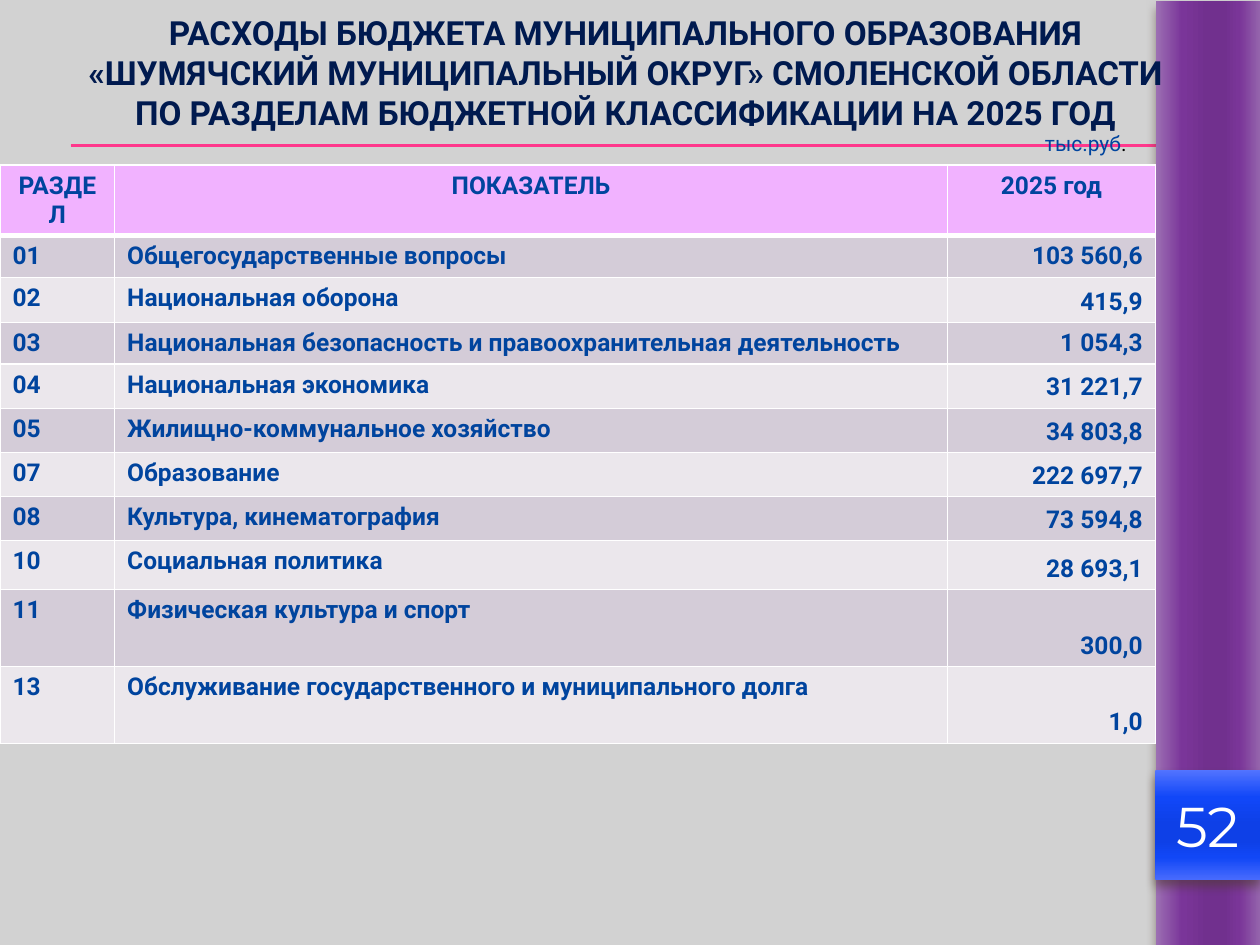
import pptx
import pptx.dml.color
import pptx.enum.dml
import pptx.enum.shapes
import pptx.enum.text
import pptx.oxml
import pptx.oxml.ns
import pptx.util

Pt = pptx.util.Pt
Align = pptx.enum.text.PP_ALIGN
Anchor = pptx.enum.text.MSO_ANCHOR
NS = pptx.oxml.ns.nsdecls("a")

PURPLE = [(0, "9C6FB3"), (25, "7A3599"), (50, "71308E"),
          (65, "71308E"), (80, "7A3598"), (100, "9566AD")]
BLUE = [(0, "5374FF"), (25, "1147F8"), (50, "0E40E7"),
        (65, "0E40E7"), (80, "1147F6"), (100, "476AFD")]

HEAD = ("РАЗДЕЛ", "ПОКАЗАТЕЛЬ", "2025 год")
ROWS = [
    ("01", "Общегосударственные вопросы", "103 560,6"),
    ("02", "Национальная оборона", "415,9"),
    ("03", "Национальная безопасность и правоохранительная деятельность", "1 054,3"),
    ("04", "Национальная экономика", "31 221,7"),
    ("05", "Жилищно-коммунальное хозяйство", "34 803,8"),
    ("07", "Образование", "222 697,7"),
    ("08", "Культура, кинематография", "73 594,8"),
    ("10", "Социальная политика", "28 693,1"),
    ("11", "Физическая культура и спорт", "300,0"),
    ("13", "Обслуживание государственного и муниципального долга", "1,0"),
]
WIDTHS = (9.1, 66.1, 16.5)
HEIGHTS = (3.4, 3, 3.6, 2.6, 3.5, 3.5, 3.5, 3.5, 3.9, 6.1, 6.1)


def rgb(code):
    return pptx.dml.color.RGBColor.from_string(code)


def xml(text):
    """Element from text whose first tag has no attributes closed by '/>'."""
    return pptx.oxml.parse_xml(text.replace(">", f" {NS}>", 1))


def stroke(tag, width, color):
    """Outline element for a cell edge or for letters."""
    return xml(f'<a:{tag} w="{Pt(width)}"><a:solidFill><a:srgbClr val="{color}"/>'
               f'</a:solidFill></a:{tag}>')


class Sheet:
    """Draws on one slide; lengths are in cells of a 100 by 75 grid."""
    font = "Roboto"
    ink = "00449E"

    def __init__(self, deck, paper):
        self.unit = deck.slide_width / 100
        self.slide = deck.slides.add_slide(deck.slide_layouts[5])
        fill = self.slide.background.fill
        fill.solid()
        fill.fore_color.rgb = rgb(paper)
        self.shapes = self.slide.shapes

    def span(self, *cells):
        return [round(c * self.unit) for c in cells]

    def words(self, para, text, size, color=None, bold=False, font=None, align=None):
        para.alignment = align
        run = para.add_run()
        run.text = text
        run.font.size = Pt(size)
        run.font.bold = bold
        run.font.name = font or self.font
        run.font.color.rgb = rgb(color or self.ink)
        return run

    def rule(self, left, right, top, color):
        ends = self.span(left, top, right, top)
        line = self.shapes.add_connector(pptx.enum.shapes.MSO_CONNECTOR.STRAIGHT, *ends)
        line.line.color.rgb = rgb(color)
        line.line.width = Pt(0.75)
        line._element.spPr.append(xml("<a:effectLst></a:effectLst>"))

    def panel(self, box, stops, turn=0):
        """Rectangle with a top-to-bottom gradient and a soft shadow."""
        shape = self.shapes.add_shape(
            pptx.enum.shapes.MSO_SHAPE.RECTANGLE, *self.span(*box))
        shape.rotation = turn
        marks = "".join(f'<a:gs pos="{p * 1000}"><a:srgbClr val="{c}"/></a:gs>'
                        for p, c in stops)
        props = shape._element.spPr
        props.insert(2, xml(f'<a:gradFill rotWithShape="1"><a:gsLst>{marks}</a:gsLst>'
                            '<a:lin ang="5400000" scaled="0"/></a:gradFill>'))
        shape.line.fill.background()
        props.append(xml(
            '<a:effectLst>'
            f'<a:outerShdw blurRad="{Pt(6)}" dist="{Pt(4)}" dir="5400000" '
            'rotWithShape="0"><a:srgbClr val="4E3B30"><a:alpha val="60000"/>'
            '</a:srgbClr></a:outerShdw></a:effectLst>'))
        return shape

    def title(self, box, text):
        shape = self.shapes.title
        shape.left, shape.top, shape.width, shape.height = self.span(*box)
        frame = shape.text_frame
        frame.auto_size = pptx.enum.text.MSO_AUTO_SIZE.NONE
        frame.word_wrap = True
        frame.vertical_anchor = Anchor.MIDDLE
        frame.margin_left, frame.margin_right = self.span(2, 2)
        run = self.words(frame.paragraphs[0], text, 19, "001A4F", True,
                         align=Align.CENTER)
        run.font._element.insert(0, stroke("ln", 0.71, "4E005F"))
        # Bring the heading in front of the rules and the side bar
        self.shapes._spTree.append(shape._element)

    def cell(self, cell, text, fill, align, anchor, base):
        cell.fill.solid()
        cell.fill.fore_color.rgb = rgb(fill)
        cell.vertical_anchor = anchor
        self.words(cell.text_frame.paragraphs[0], text, 14, bold=True, align=align)
        props = cell._tc.get_or_add_tcPr()
        edges = {"lnL": 1, "lnR": 1, "lnT": 1, "lnB": base}
        for at, (tag, width) in enumerate(edges.items()):
            props.insert(at, stroke(tag, width, "FFFFFF"))

    def table(self, left, top):
        size = self.span(left, top, sum(WIDTHS), sum(HEIGHTS))
        grid = self.shapes.add_table(len(HEIGHTS), len(WIDTHS), *size).table
        for col, width in zip(grid.columns, self.span(*WIDTHS)):
            col.width = width
        for row, height in zip(grid.rows, self.span(*HEIGHTS)):
            row.height = height
        for c, text in enumerate(HEAD):
            self.cell(grid.cell(0, c), text, "F1B2FF", Align.CENTER, Anchor.TOP, 3)
        for r, row in enumerate(ROWS, 1):
            fill = "D4CCD8" if r % 2 else "EBE7EC"
            for c, text in enumerate(row):
                last = c == len(row) - 1
                self.cell(grid.cell(r, c), text, fill,
                          Align.RIGHT if last else Align.LEFT,
                          Anchor.BOTTOM if last else Anchor.TOP, 1)

    def badge(self, box, text):
        frame = self.panel(box, BLUE).text_frame
        frame.vertical_anchor = Anchor.MIDDLE
        self.words(frame.paragraphs[0], text, 32, "FFFFFF", font="Montserrat",
                   align=Align.CENTER)

    def note(self, box, parts):
        frame = self.shapes.add_textbox(*self.span(*box)).text_frame
        frame.word_wrap = True
        for text, color in parts:
            self.words(frame.paragraphs[0], text, 12, color, align=Align.RIGHT)


def main():
    deck = pptx.Presentation()
    deck.slide_width = pptx.util.Inches(10)
    deck.slide_height = pptx.util.Inches(7.5)
    sheet = Sheet(deck, "D2D2D2")
    for top in (11.5, 11.6):
        sheet.rule(5.6, 100, top, "FF388C")
    sheet.panel((58.4, 33.4, 75, 8.3), PURPLE, 270)
    sheet.title((4.3, 0, 90.7, 11.5),
                "РАСХОДЫ БЮДЖЕТА МУНИЦИПАЛЬНОГО ОБРАЗОВАНИЯ «ШУМЯЧСКИЙ МУНИЦИПАЛЬНЫЙ "
                "ОКРУГ» СМОЛЕНСКОЙ ОБЛАСТИ ПО РАЗДЕЛАМ БЮДЖЕТНОЙ КЛАССИФИКАЦИИ НА 2025 ГОД")
    sheet.table(0, 13.1)
    sheet.badge((91.7, 61.1, 8.3, 8.7), "52")
    sheet.note((80.7, 9.9, 9.7, 3), [("тыс.руб", sheet.ink), (".", "000000")])
    deck.save("out.pptx")


if __name__ == "__main__":
    main()
